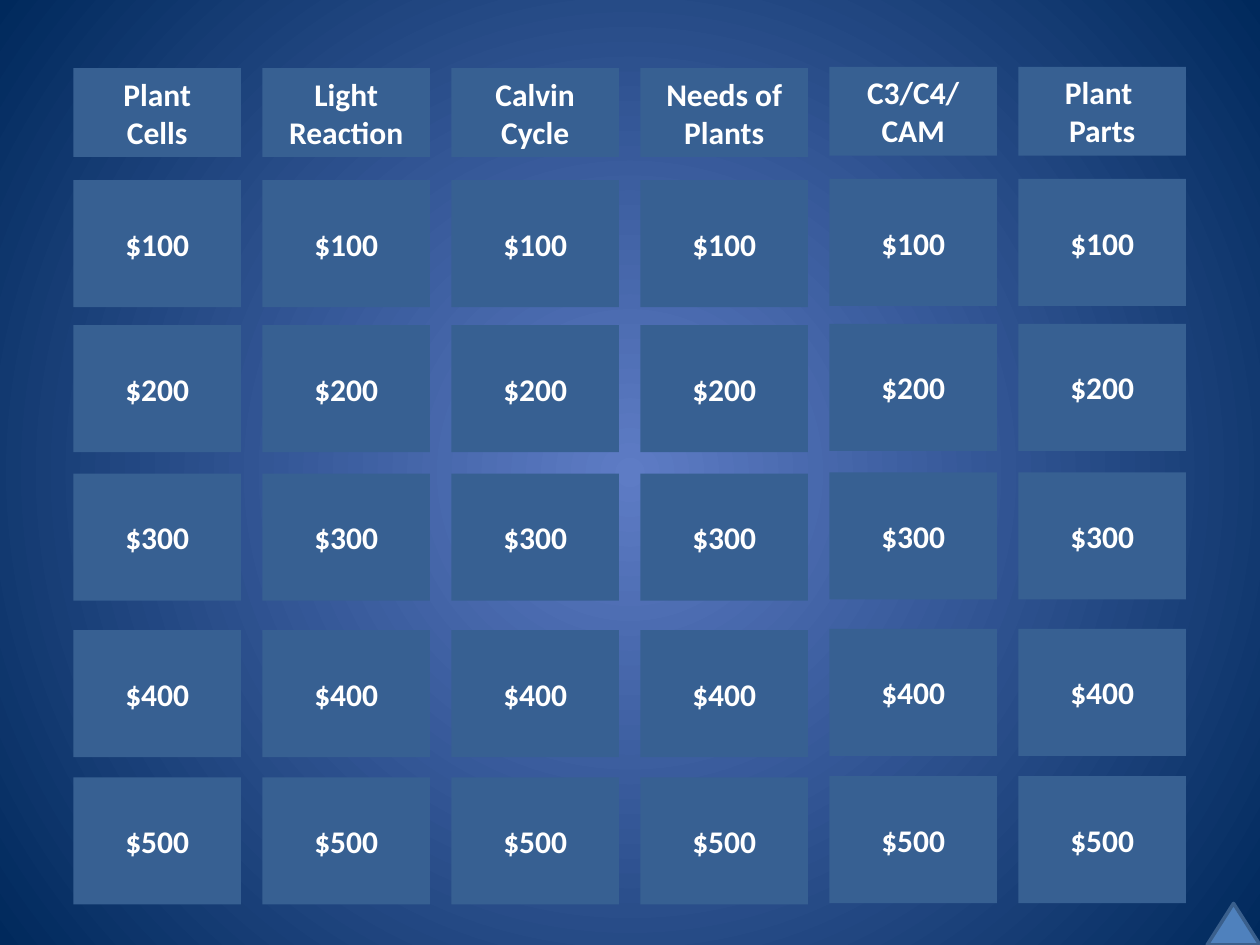
import dataclasses

import lxml.etree
import pptx
import pptx.dml.color
import pptx.enum.shapes
import pptx.enum.text
import pptx.oxml.ns
import pptx.util

RECTANGLE = pptx.enum.shapes.MSO_SHAPE.RECTANGLE
TRIANGLE = pptx.enum.shapes.MSO_SHAPE.ISOSCELES_TRIANGLE

CATEGORIES = [
    "Plant\vCells",
    "Light Reaction",
    "Calvin Cycle",
    "Needs of Plants",
    "C3/C4/\vCAM",
    "Plant \vParts",
]
AMOUNTS = ["$100", "$200", "$300", "$400", "$500"]

# Shares of the slide, in percent of its width or height
BOARD_LEFT, COLUMN_STEP, CELL_WIDTH = 5.83, 15, 13.3
HEADER_TOP, HEADER_HEIGHT = 7.2, 9.4
AMOUNT_TOPS, AMOUNT_HEIGHT = [19.07, 34.4, 50.13, 66.67, 82.27], 13.45
RAISED_COLUMNS, RAISE = (4, 5), 0.13


@dataclasses.dataclass(frozen=True)
class Theme:
    font: str = "Calibri"
    text_size: float = 18
    text: str = "FFFFFF"
    cell: str = "376092"
    marker: str = "4F81BD"
    marker_line: str = "3A5F8C"
    marker_line_width: float = 2
    glow: str = "5E7CC5"
    edge: str = "00295C"


def rgb(value):
    return pptx.dml.color.RGBColor.from_string(value)


def write_text(shape, text, *, font, size, color, bold=False):
    """Centre formatted text in the shape; a vertical tab breaks the line."""
    frame = shape.text_frame
    frame.word_wrap = True
    frame.vertical_anchor = pptx.enum.text.MSO_ANCHOR.MIDDLE
    paragraph = frame.paragraphs[0]
    paragraph.text = text
    paragraph.alignment = pptx.enum.text.PP_ALIGN.CENTER
    for run in paragraph.runs:
        run.font.name = font
        run.font.size = pptx.util.Pt(size)
        run.font.bold = bold
        run.font.color.rgb = rgb(color)


class Board:
    def __init__(self, presentation, theme):
        self.theme = theme
        self.width = presentation.slide_width
        self.height = presentation.slide_height
        self.slide = presentation.slides.add_slide(presentation.slide_layouts[6])

    def background(self):
        """Fill the slide with a glow that darkens outward from its centre."""
        fill = self.slide.background.fill
        fill.gradient()
        for stop, color in zip(fill.gradient_stops, (self.theme.glow, self.theme.edge)):
            stop.color.rgb = rgb(color)
        qn = pptx.oxml.ns.qn
        gradient = self.slide.element.find(".//" + qn("a:gradFill"))
        gradient.remove(gradient.find(qn("a:lin")))
        circle = lxml.etree.SubElement(gradient, qn("a:path"), {"path": "circle"})
        centre = dict.fromkeys("ltrb", "50000")
        lxml.etree.SubElement(circle, qn("a:fillToRect"), centre)

    def shape(self, kind, left, top, width, height, color):
        """Add a plain filled shape, placed in percent of the slide."""
        shape = self.slide.shapes.add_shape(
            kind,
            round(self.width * left / 100),
            round(self.height * top / 100),
            round(self.width * width / 100),
            round(self.height * height / 100),
        )
        shape.shadow.inherit = False
        shape.fill.solid()
        shape.fill.fore_color.rgb = rgb(color)
        shape.line.fill.background()
        return shape

    def cell(self, column, top, height, text):
        left = BOARD_LEFT + column * COLUMN_STEP
        if column in RAISED_COLUMNS:
            top -= RAISE
        theme = self.theme
        cell = self.shape(RECTANGLE, left, top, CELL_WIDTH, height, theme.cell)
        write_text(cell, text, font=theme.font, size=theme.text_size,
                   color=theme.text, bold=True)

    def corner_marker(self):
        width, height = 4.2, 4.4
        marker = self.shape(TRIANGLE, 100 - width, 100 - height, width, height,
                            self.theme.marker)
        marker.line.color.rgb = rgb(self.theme.marker_line)
        marker.line.width = pptx.util.Pt(self.theme.marker_line_width)


def main():
    presentation = pptx.Presentation()
    presentation.slide_width = pptx.util.Inches(10)
    presentation.slide_height = pptx.util.Inches(7.5)

    board = Board(presentation, Theme())
    board.background()
    for top, amount in zip(AMOUNT_TOPS, AMOUNTS):
        for column in range(len(CATEGORIES)):
            board.cell(column, top, AMOUNT_HEIGHT, amount)
    for column, category in enumerate(CATEGORIES):
        board.cell(column, HEADER_TOP, HEADER_HEIGHT, category)
    board.corner_marker()

    presentation.save("out.pptx")


if __name__ == "__main__":
    main()
